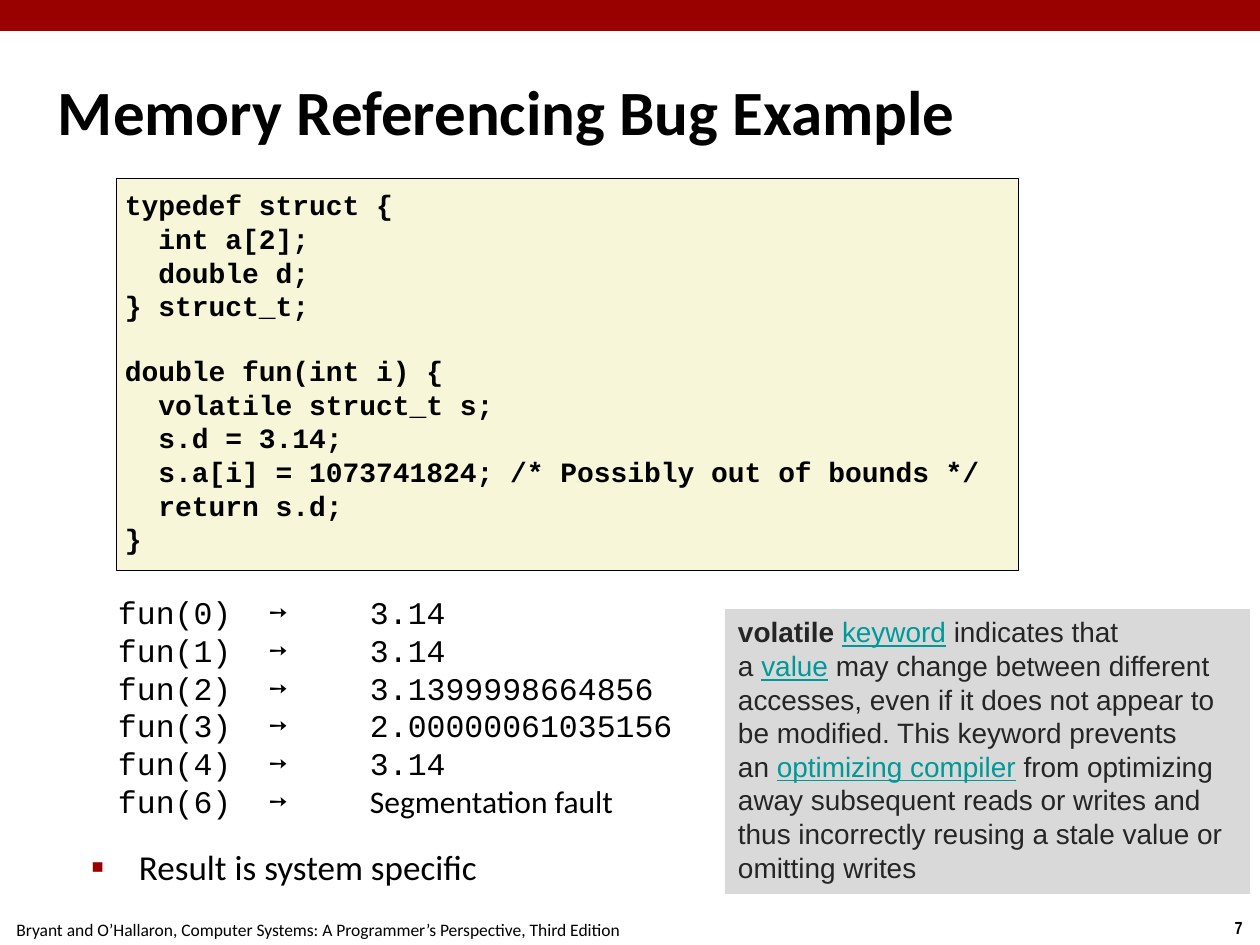
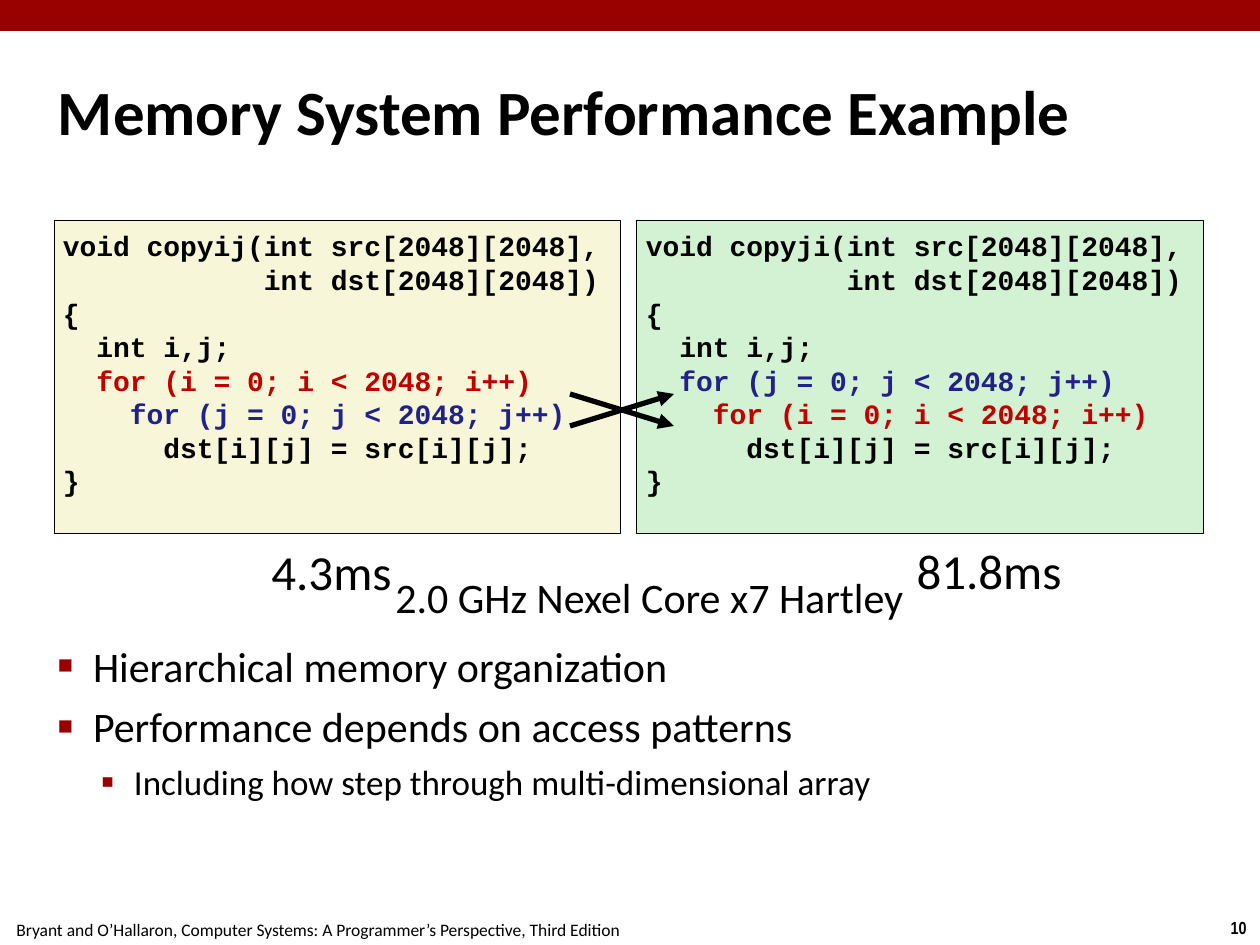
from pptx import Presentation
from pptx.dml.color import RGBColor
from pptx.enum.shapes import MSO_CONNECTOR, MSO_SHAPE
from pptx.enum.text import MSO_ANCHOR, MSO_AUTO_SIZE, PP_ALIGN
from pptx.oxml.ns import qn
from pptx.util import Inches, Pt
from lxml import etree

RECT = MSO_SHAPE.RECTANGLE
LINE = MSO_CONNECTOR.STRAIGHT
TOP, MIDDLE = MSO_ANCHOR.TOP, MSO_ANCHOR.MIDDLE
LEFT, CENTER = PP_ALIGN.LEFT, PP_ALIGN.CENTER
FIXED = MSO_AUTO_SIZE.NONE

SCALE = Inches(1) / 126
WIDE, HIGH = 1260, 945
HEX = {
    "band": "990000", "ink": "000000", "white": "FFFFFF", "cream": "F8F6D9",
    "mint": "D3F2D3", "grey": "D9D9D9", "dark": "252525", "link": "009999",
    "red": "C00000", "blue": "21218A",
}
# Text formats
HEAD = {"name": "Calibri", "size": Pt(36), "bold": True}
ITEM = {"name": "Calibri", "size": Pt(24), "bold": False}
SUB = {**ITEM, "size": Pt(20)}
BIG = {**ITEM, "size": Pt(28)}
FOOT = {**ITEM, "size": Pt(10)}
PAGE = {"name": "Arial Narrow", "size": Pt(10), "bold": True}
CODE = {"name": "Courier New", "size": Pt(16), "bold": True}
MONO = {"name": "Courier New", "size": Pt(18), "bold": False}
NOTE = {"name": "Arial", "size": Pt(16), "bold": False}
# Bullets: mark, size in percent, left margin, hang, space before
SQUARE = ("■", 60, 35, 35, 6)
SMALL = ("▪", 110, 76, 33, 5)
DEEP = ("▪", 110, 71, 48, 5)

CREDIT = ("Bryant and O’Hallaron, Computer Systems: "
          "A Programmer’s Perspective, Third Edition")
STRUCT = [
    """typedef struct {
  int a[2];
  double d;
} struct_t;""",
    """double fun(int i) {
  volatile struct_t s;
  s.d = 3.14;
  s.a[i] = 1073741824; /* Possibly out of bounds */
  return s.d;
}"""]
CALLS = [(0, "3.14"), (1, "3.14"), (2, "3.1399998664856"),
         (3, "2.00000061035156"), (4, "3.14"), (6, "Segmentation fault")]
VOLATILE = [
    ("volatile\u00a0", "bold"), ("keyword", "link"),
    ("\u00a0indicates that a\u00a0", ""), ("value", "link"),
    ("\u00a0may change between different accesses, even if it does not appear "
     "to be modified. This keyword prevents an\u00a0", ""),
    ("optimizing compiler", "link"),
    ("\u00a0from optimizing away subsequent reads or writes and thus "
     "incorrectly reusing a stale value or omitting writes", ""),
]


def px(n):
    return round(n * SCALE)


def rgb(key):
    return RGBColor.from_string(HEX[key])


def add_run(para, text, fmt, color="ink"):
    run = para.add_run()
    run.text = text
    for key, value in fmt.items():
        setattr(run.font, key, value)
    run.font.color.rgb = rgb(color)


def set_frame(shape, pad=5, tall=5, anchor=TOP, wrap=True):
    frame = shape.text_frame
    values = {"margin_left": px(pad), "margin_right": px(pad),
              "margin_top": px(tall), "margin_bottom": px(tall),
              "vertical_anchor": anchor, "word_wrap": wrap,
              "auto_size": FIXED}
    for key, value in values.items():
        setattr(frame, key, value)
    return frame


def add_para(frame, first, align=LEFT):
    para = frame.paragraphs[0] if first else frame.add_paragraph()
    para.alignment = align
    return para


def move(shape, box):
    for key, value in zip(("left", "top", "width", "height"), box):
        setattr(shape, key, px(value))


def add_box(slide, box, fill, edge=False):
    shape = slide.shapes.add_shape(RECT, *map(px, box))
    shape.shadow.inherit = False
    shape.fill.solid()
    shape.fill.fore_color.rgb = rgb(fill)
    if edge:
        shape.line.color.rgb = rgb("ink")
        shape.line.width = Pt(0.5)
    else:
        shape.line.fill.background()
    return shape


def add_label(slide, box, text, fmt, pad=5):
    shape = slide.shapes.add_textbox(*map(px, box))
    frame = set_frame(shape, pad, pad, wrap=False)
    add_run(add_para(frame, True, CENTER), text, fmt)


def set_bullet(para, kind):
    mark, size, left, hang, space = kind
    para.space_before = Pt(space)
    props = para._p.get_or_add_pPr()
    props.set("marL", str(px(left)))
    props.set("indent", str(-px(hang)))
    color = etree.SubElement(props, qn("a:buClr"))
    etree.SubElement(color, qn("a:srgbClr"), val=HEX["band"])
    etree.SubElement(props, qn("a:buSzPct"), val=str(size * 1000))
    etree.SubElement(props, qn("a:buFont"), typeface="Arial")
    etree.SubElement(props, qn("a:buChar"), char=mark)


def set_tabs(para, stops):
    tabs = etree.SubElement(para._p.get_or_add_pPr(), qn("a:tabLst"))
    for stop in stops:
        etree.SubElement(tabs, qn("a:tab"), pos=str(px(stop)), algn="l")


# Parts shared by both slides
def add_slide(deck, title, page):
    slide = deck.slides.add_slide(deck.slide_layouts[1])
    add_label(slide, (1217, 911, 43, 34), page, PAGE, 6)
    add_label(slide, (-2, 913, 640, 34), CREDIT, FOOT, 6)
    add_box(slide, (0, 0, WIDE, 31), "band")
    move(slide.shapes.title, (53, 35, 1155, 150))
    frame = set_frame(slide.shapes.title, anchor=MIDDLE)
    add_run(add_para(frame, True), title, HEAD)
    return slide


def fill_list(slide, box, items):
    body = slide.placeholders[1]
    move(body, box)
    frame = set_frame(body)
    for n, (text, level, fmt, kind) in enumerate(items):
        para = add_para(frame, n == 0)
        para.level = level
        set_bullet(para, kind)
        add_run(para, text, fmt)


def add_code(slide, box, fill, blocks):
    frame = set_frame(add_box(slide, box, fill, True), 9, 9)
    for b, block in enumerate(blocks):
        for n, line in enumerate(block.split("\n")):
            para = add_para(frame, b == n == 0)
            if b and n == 0:
                para.space_before = Pt(18)
            color = ("red" if "for (i" in line else
                     "blue" if "for (j" in line else "ink")
            add_run(para, line, CODE, color)


# Bug slide
def add_calls(slide, box):
    frame = set_frame(add_box(slide, box, "white"))
    for n, (arg, value) in enumerate(CALLS):
        para = add_para(frame, n == 0)
        set_tabs(para, (151, 252))
        add_run(para, f"fun({arg})\t➙\t", MONO)
        face = MONO if value[0].isdigit() else {**MONO, "name": "Calibri"}
        add_run(para, value, face)


def add_note(slide, box):
    frame = set_frame(add_box(slide, box, "grey"), 13, 6)
    para = add_para(frame, True)
    for text, kind in VOLATILE:
        link = kind == "link"
        fmt = {**NOTE, "bold": kind == "bold", "underline": link}
        add_run(para, text, fmt, "link" if link else "dark")


def bug_slide(deck):
    slide = add_slide(deck, "Memory Referencing Bug Example", "7")
    fill_list(slide, (63, 840, 1134, 78),
              [("Result is system specific", 1, SUB, DEEP)])
    add_calls(slide, (113, 588, 1009, 252))
    add_code(slide, (116, 179, 903, 392), "cream", STRUCT)
    add_note(slide, (725, 609, 525, 285))


# Speed slide
def copy_code(a, b):
    return f"""void copy{a}{b}(int src[2048][2048],
            int dst[2048][2048])
{{
  int i,j;
  for ({a} = 0; {a} < 2048; {a}++)
    for ({b} = 0; {b} < 2048; {b}++)
      dst[i][j] = src[i][j];
}}"""


def add_cross(slide, box):
    x, y, w, h = box
    for start, end in ((y, y + h), (y + h, y)):
        arrow = slide.shapes.add_connector(
            LINE, *map(px, (x, start, x + w, end)))
        arrow.line.color.rgb = rgb("ink")
        arrow.line.width = Pt(3)
        props = arrow._element.spPr
        etree.SubElement(props.find(qn("a:ln")), qn("a:tailEnd"),
                         type="triangle")
        etree.SubElement(props, qn("a:effectLst"))


def add_times(slide, box):
    x, y, w, h = box
    add_label(slide, (x + w - 158, y, 158, h), "81.8ms", BIG)
    add_label(slide, (x, y, 147, h), "4.3ms", BIG, 6)
    add_label(slide, (x + 138, y + 32, 507, 62),
              "2.0 GHz Nexel Core x7 Hartley", ITEM)


def speed_slide(deck):
    slide = add_slide(deck, "Memory System Performance Example", "10")
    fill_list(slide, (53, 635, 1155, 306), [
        ("Hierarchical memory organization", 0, ITEM, SQUARE),
        ("Performance depends on access patterns", 0, ITEM, SQUARE),
        ("Including how step through multi-dimensional array", 1, SUB, SMALL),
    ])
    for x, fill, order in ((637, "mint", "ji"), (54, "cream", "ij")):
        add_code(slide, (x, 220, 567, 314), fill, [copy_code(*order)])
    add_cross(slide, (570, 394, 104, 32))
    add_times(slide, (258, 535, 810, 71))


def main():
    deck = Presentation()
    deck.slide_width, deck.slide_height = px(WIDE), px(HIGH)
    bug_slide(deck)
    speed_slide(deck)
    deck.save("out.pptx")


if __name__ == "__main__":
    main()
